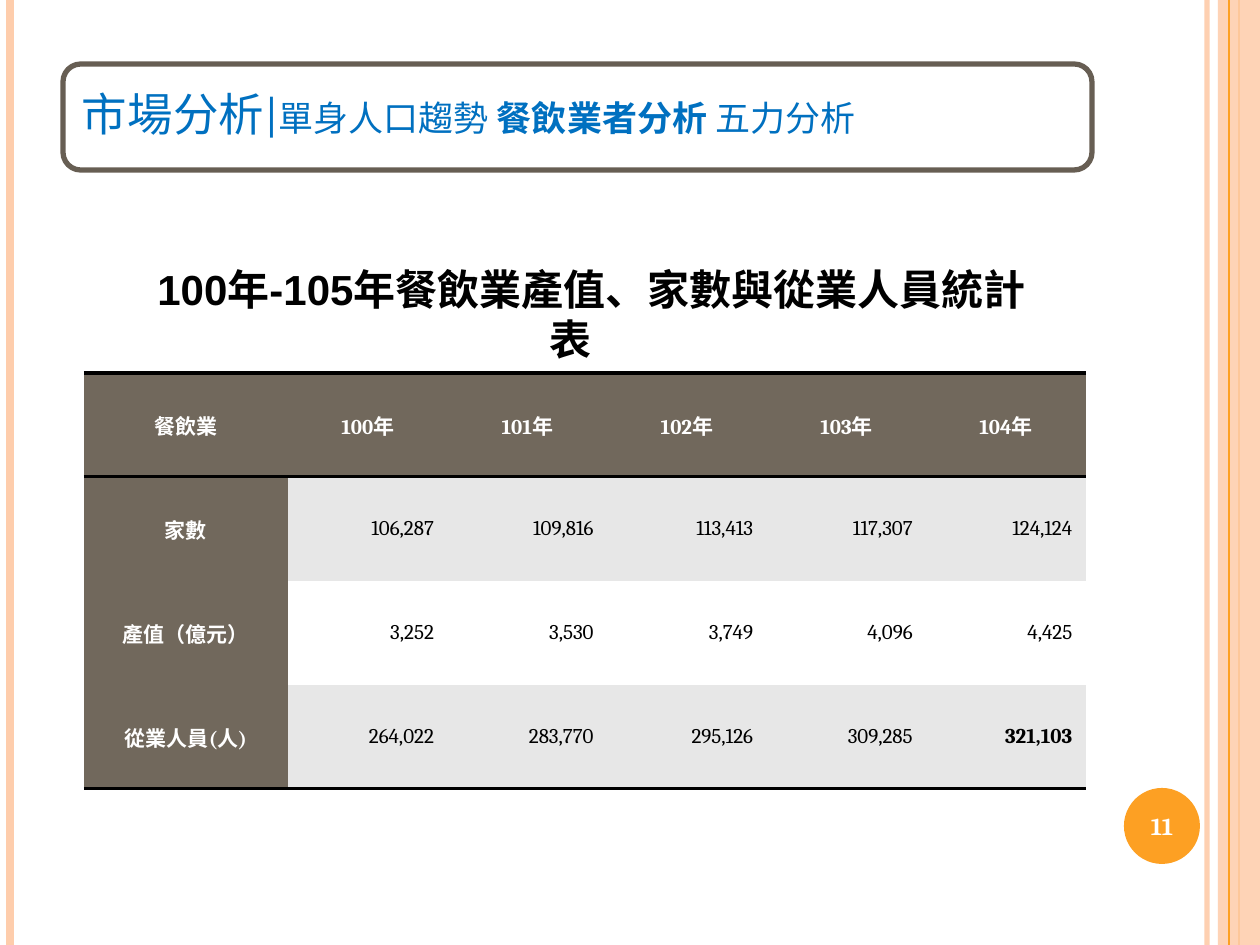
from lxml import etree
from pptx import Presentation
from pptx.dml.color import RGBColor
from pptx.enum.shapes import MSO_CONNECTOR, MSO_SHAPE
from pptx.enum.text import MSO_ANCHOR, PP_ALIGN
from pptx.oxml.ns import qn
from pptx.util import Emu, Pt

LEFT, MID, RIGHT = PP_ALIGN.LEFT, PP_ALIGN.CENTER, PP_ALIGN.RIGHT
CENTRE = MSO_ANCHOR.MIDDLE
STRAIGHT = MSO_CONNECTOR.STRAIGHT
RECT, OVAL, ROUND = MSO_SHAPE.RECTANGLE, MSO_SHAPE.OVAL, MSO_SHAPE.ROUNDED_RECTANGLE

COLORS = {
    "peach": "FECDAC", "orange": "FDA023", "brown": "71685C", "frame": "675E53",
    "blue": "0070C0", "gray": "E7E7E7", "white": "FFFFFF", "black": "000000",
}

# Content: title runs are (text, size, bold)
TITLE = [
    ("市場分析|", 26, False),
    ("單身人口趨勢 ", 20, False),
    ("餐飲業者分析 ", 20, True),
    ("五力分析", 20, False),
]
HEADING = "100年-105年餐飲業產值、家數與從業人員統計表"
ROWS = [
    ["餐飲業", "100年", "101年", "102年", "103年", "104年"],
    ["家數", "106,287", "109,816", "113,413", "117,307", "124,124"],
    ["產值（億元）", "3,252", "3,530", "3,749", "4,096", "4,425"],
    ["從業人員(人)", "264,022", "283,770", "295,126", "309,285", "321,103"],
]
PAGE = "11"

# Layout in px
WIDE, HIGH = 1260, 945
BARS = [  # x, color, points, opacity %
    (1207, "peach", 3, 93), (10, "peach", 4.5, 100), (1239, "orange", 1.5, 100),
]
THIN = (1229, "orange", 0.75, 100)
BAND = (1218, 0, 42, HIGH)
DISC = (1124, 788, 76, 76)
FRAME = (63, 64, 1029, 106)
HEAD = (68, 69, 1018, 96)
CAPTION = (84, 263, 973, 102)
NUMBER = (1120, 790, 84, 72)
GRID = (84, 373, 1002, 416)
FIRST = 204
PAD, INDENT = 9, 42


def px(n):
    return Emu(round(n * 914400 / 126))


def box(area):
    return [px(n) for n in area]


def rgb(name):
    return RGBColor.from_string(COLORS[name])


def fade(fill, pct):
    tone = fill._xPr.find(qn("a:solidFill"))[0]
    etree.SubElement(tone, qn("a:alpha")).set("val", str(pct * 1000))


def draw(shapes, kind, area, color, edge=None):
    shape = shapes.add_shape(kind, *box(area))
    shape.shadow.inherit = False
    shape.fill.solid()
    shape.fill.fore_color.rgb = rgb(color)
    if edge:
        shape.line.color.rgb = rgb(edge)
        shape.line.width = Pt(3)
    else:
        shape.line.fill.background()
    return shape


def rule(shapes, x, color, width, pct):
    line = shapes.add_connector(STRAIGHT, px(x), 0, px(x), px(HIGH))
    line.line.color.rgb = rgb(color)
    line.line.width = Pt(width)
    if pct < 100:
        fade(line.line.fill, pct)
    etree.SubElement(line._element.spPr, qn("a:effectLst"))


def style(par, size, color, bold, face="Cambria", align=MID):
    par.alignment = align
    font = par.font
    font.name, font.size, font.bold = face, Pt(size), bold
    font.color.rgb = rgb(color)


def label(shapes, area, text, size, color, face):
    frame = shapes.add_textbox(*box(area)).text_frame
    frame.word_wrap = True
    frame.vertical_anchor = CENTRE
    frame.margin_top = frame.margin_bottom = 0
    par = frame.paragraphs[0]
    par.text = text
    style(par, size, color, True, face)
    return par


def border(cell, sides):
    props = cell._tc.get_or_add_tcPr()
    for spot, side in enumerate(("lnL", "lnR", "lnT", "lnB")):
        line = etree.Element(qn("a:" + side))
        if side in sides:
            line.set("w", str(Pt(2)))
            fill = etree.SubElement(line, qn("a:solidFill"))
            etree.SubElement(fill, qn("a:srgbClr")).set("val", COLORS["black"])
        else:
            line.set("w", "0")
            etree.SubElement(line, qn("a:noFill"))
        props.insert(spot, line)


def add_grid(shapes):
    rows, cols = len(ROWS), len(ROWS[0])
    table = shapes.add_table(rows, cols, *box(GRID)).table
    rest = (GRID[2] - FIRST) / (cols - 1)
    for c, col in enumerate(table.columns):
        col.width = px(rest if c else FIRST)
    for r, row in enumerate(table.rows):
        row.height = px(GRID[3] / rows)
        sides = ["lnT", "lnB"] if r == 0 else ["lnB"] if r == rows - 1 else []
        if r == 1:
            sides = ["lnT"]
        for c, text in enumerate(ROWS[r]):
            cell = table.cell(r, c)
            head = r == 0 or c == 0
            last = r == rows - 1 and c == cols - 1
            cell.vertical_anchor = CENTRE
            cell.margin_left = cell.margin_right = px(PAD)
            cell.margin_top = cell.margin_bottom = 0
            cell.fill.solid()
            cell.fill.fore_color.rgb = rgb("brown" if head else "gray" if r % 2 else "white")
            par = cell.text_frame.paragraphs[0]
            par.text = text if head else text + " "
            style(par, 12, "white" if head else "black", head or last,
                  align=MID if head else RIGHT)
            border(cell, sides)


def add_title(slide):
    title = slide.shapes.title
    title.left, title.top, title.width, title.height = box(HEAD)
    slide.shapes._spTree.append(title._element)  # in front of its frame
    frame = title.text_frame
    frame.word_wrap = True
    frame.vertical_anchor = CENTRE
    frame.margin_left = frame.margin_right = px(14)
    frame.margin_top = frame.margin_bottom = px(14)
    par = frame.paragraphs[0]
    style(par, 20, "blue", False, align=LEFT)
    par.line_spacing = 0.9
    for text, size, bold in TITLE:
        run = par.add_run()
        run.text = text
        run.font.size, run.font.bold = Pt(size), bold


def main():
    deck = Presentation()
    deck.slide_width, deck.slide_height = px(WIDE), px(HIGH)
    slide = deck.slides.add_slide(deck.slide_layouts[5])
    shapes = slide.shapes

    # Side decoration
    for bar in BARS:
        rule(shapes, *bar)
    fade(draw(shapes, RECT, BAND, "peach").fill, 87)
    rule(shapes, *THIN)
    draw(shapes, OVAL, DISC, "orange")

    # Title in its frame
    draw(shapes, ROUND, FRAME, "white", "frame")
    add_title(slide)

    # Table, heading and page number
    add_grid(shapes)
    par = label(shapes, CAPTION, HEADING, 24, "black", "Arial")
    par._p.get_or_add_pPr().set("indent", str(px(INDENT)))
    label(shapes, NUMBER, PAGE, 14, "white", "Cambria")

    deck.save("out.pptx")


if __name__ == "__main__":
    main()
